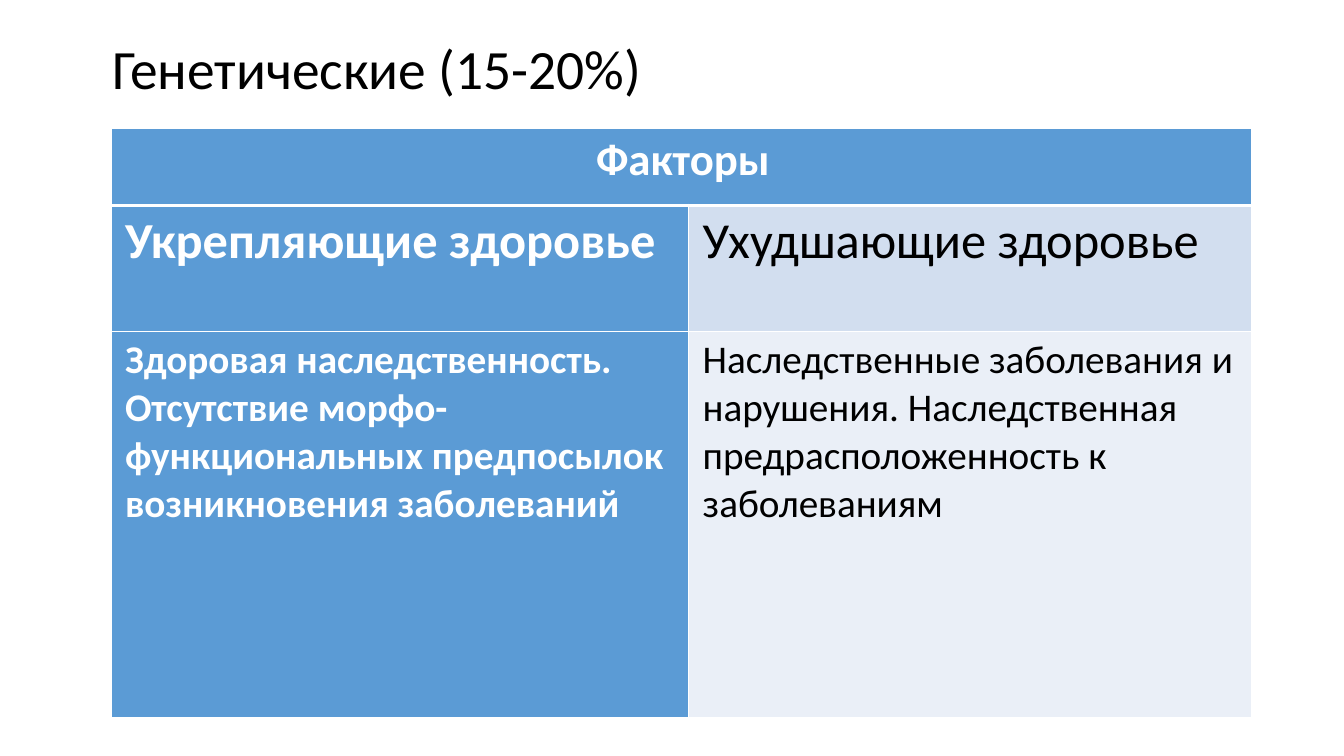
from lxml import etree
from pptx import Presentation
from pptx.dml.color import RGBColor
from pptx.enum.text import MSO_ANCHOR, PP_ALIGN
from pptx.oxml.ns import qn
from pptx.util import Inches, Pt

MIDDLE, TOP = MSO_ANCHOR.MIDDLE, MSO_ANCHOR.TOP
LEFT, CENTER = PP_ALIGN.LEFT, PP_ALIGN.CENTER

FONT = "Calibri"
SLIDE_W, SLIDE_H = 13.33, 7.5
BLUE, PALE, PALER = "5B9BD5", "D2DEEF", "EAEFF7"
WHITE, BLACK = "FFFFFF", "000000"

# Table grid, in inches
TABLE_LEFT, TABLE_TOP = 1.1, 1.27
COLUMNS = [5.73, 5.58]
ROWS = [0.77, 1.25, 3.83]
HEADER_RULE, THIN_RULE = 3, 1

HEADER = "Факторы"
# Each row: text size, paragraph spacing, fill of the right cell, two texts
FACTORS = [
    (36, 0, PALE, ["Укрепляющие здоровье", "Ухудшающие здоровье"]),
    (28, 3, PALER, [
        "Здоровая наследственность. Отсутствие морфо- функциональных "
        "предпосылок возникновения заболеваний",
        "Наследственные заболевания и нарушения. Наследственная "
        "предрасположенность к заболеваниям"]),
]


def rgb(value):
    return RGBColor.from_string(value)


def write(frame, text, size, color, bold=False, align=LEFT, spacing=0):
    frame.word_wrap = True
    paragraph = frame.paragraphs[0]
    paragraph.alignment = align
    paragraph.space_before = paragraph.space_after = Pt(spacing)
    run = paragraph.add_run()
    run.text = text
    run.font.name, run.font.size, run.font.bold = FONT, Pt(size), bold
    run.font.color.rgb = rgb(color)
    return paragraph


def add_borders(cell, top, bottom):
    """White rules round a cell; widths in points."""
    properties = cell._tc.get_or_add_tcPr()
    sides = {"lnL": THIN_RULE, "lnR": THIN_RULE, "lnT": top, "lnB": bottom}
    for side, width in sides.items():
        rule = etree.SubElement(properties, qn("a:" + side), w=str(Pt(width)))
        fill = etree.SubElement(rule, qn("a:solidFill"))
        etree.SubElement(fill, qn("a:srgbClr"), val=WHITE)


def style_cell(cell, fill, top=THIN_RULE, bottom=THIN_RULE):
    add_borders(cell, top, bottom)
    cell.fill.solid()
    cell.fill.fore_color.rgb = rgb(fill)
    cell.margin_left, cell.margin_right = Inches(0.14), Inches(0.1)
    cell.margin_top = cell.margin_bottom = Inches(0.05)
    cell.vertical_anchor = TOP


def add_title(slide, text):
    title = slide.shapes.add_textbox(
        Inches(SLIDE_W * 0.076), 0, Inches(SLIDE_W * 0.86), Inches(SLIDE_H * 0.19))
    title.text_frame.vertical_anchor = MIDDLE
    write(title.text_frame, text, 39.6, BLACK).line_spacing = 0.9


def add_factor_table(slide):
    table = slide.shapes.add_table(
        len(ROWS), len(COLUMNS), Inches(TABLE_LEFT), Inches(TABLE_TOP),
        Inches(sum(COLUMNS)), Inches(sum(ROWS))).table
    for column, width in zip(table.columns, COLUMNS):
        column.width = Inches(width)
    for row, height in zip(table.rows, ROWS):
        row.height = Inches(height)

    # Header across both columns
    header = table.cell(0, 0)
    header.merge(table.cell(0, 1))
    for index in range(len(COLUMNS)):
        style_cell(table.cell(0, index), BLUE, bottom=HEADER_RULE)
    write(header.text_frame, HEADER, 32, WHITE, True, CENTER)

    # Strengthening factors on the left, harmful ones on the right
    for row, (size, spacing, pale, texts) in enumerate(FACTORS, start=1):
        top = HEADER_RULE if row == 1 else THIN_RULE
        looks = [(BLUE, WHITE, True), (pale, BLACK, False)]
        for column, (text, (fill, color, bold)) in enumerate(zip(texts, looks)):
            cell = table.cell(row, column)
            style_cell(cell, fill, top)
            write(cell.text_frame, text, size, color, bold, spacing=spacing)


def main():
    deck = Presentation()
    deck.slide_width, deck.slide_height = Inches(SLIDE_W), Inches(SLIDE_H)
    slide = deck.slides.add_slide(deck.slide_layouts[6])
    add_title(slide, "Генетические (15-20%)")
    add_factor_table(slide)
    deck.save("out.pptx")


if __name__ == "__main__":
    main()
